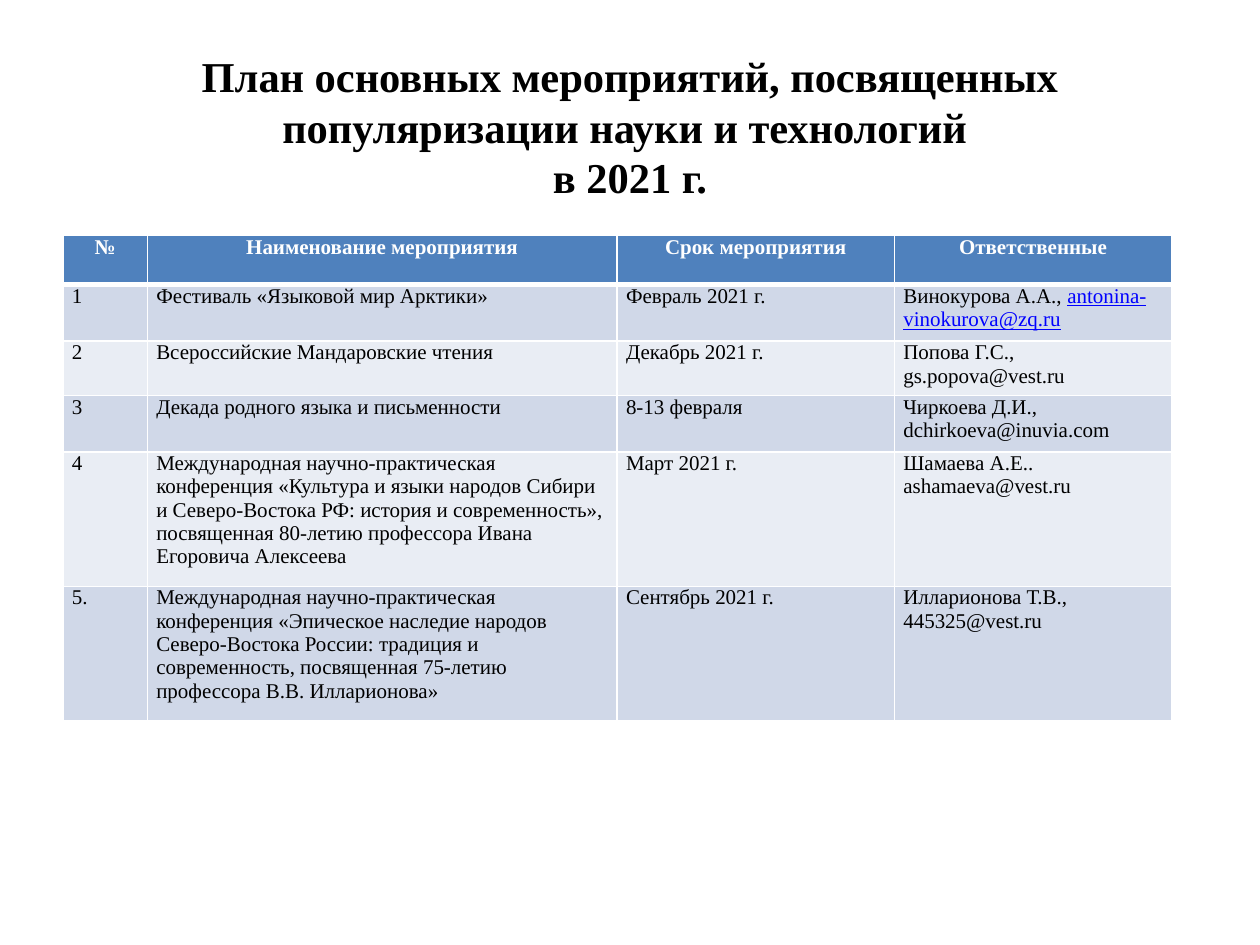
from dataclasses import dataclass

import lxml.etree
import pptx
import pptx.dml.color
import pptx.enum.text
import pptx.oxml.ns
import pptx.util

Cm = pptx.util.Cm
Pt = pptx.util.Pt
RGB = pptx.dml.color.RGBColor.from_string
ALIGN = pptx.enum.text.PP_ALIGN
qn = pptx.oxml.ns.qn


@dataclass(frozen=True)
class Theme:
    font: str = "Times New Roman"
    text: str = "000000"
    header_text: str = "FFFFFF"
    header_fill: str = "4F81BD"
    bands: tuple = ("D0D8E8", "E9EDF4")
    border: str = "FFFFFF"
    email: str = "0000FF"
    title_size: float = 24.3
    title_spacing: float = 29
    table_size: float = 12


theme = Theme()


def style_font(font, size, color, bold):
    font.name = theme.font
    font.size = Pt(size)
    font.bold = bold
    font.color.rgb = RGB(color)


def add_borders(cell, bottom_width):
    properties = cell._tc.get_or_add_tcPr()
    sides = (("lnL", 1), ("lnR", 1), ("lnT", 1), ("lnB", bottom_width))
    for position, (side, width) in enumerate(sides):
        line = lxml.etree.Element(qn(f"a:{side}"), w=str(Pt(width)))
        fill = lxml.etree.SubElement(line, qn("a:solidFill"))
        lxml.etree.SubElement(fill, qn("a:srgbClr"), val=theme.border)
        properties.insert(position, line)


presentation = pptx.Presentation()
presentation.slide_width = Cm(25.4)
presentation.slide_height = Cm(19.05)
slide = presentation.slides.add_slide(presentation.slide_layouts[5])

title = slide.shapes.title
title.left, title.top, title.width, title.height = Cm(1.27), Cm(0.76), Cm(22.86), Cm(3.18)
title_frame = title.text_frame
title_frame.text = (
    "План основных мероприятий, посвященных популяризации науки и технологий \vв 2021 г."
)
title_frame.word_wrap = True
title_frame.auto_size = pptx.enum.text.MSO_AUTO_SIZE.NONE
title_frame.vertical_anchor = pptx.enum.text.MSO_ANCHOR.TOP
title_frame.margin_top = Cm(0.25)
title_frame.margin_bottom = 0
paragraph = title_frame.paragraphs[0]
paragraph.alignment = ALIGN.CENTER
paragraph.line_spacing = Pt(theme.title_spacing)
style_font(paragraph.font, theme.title_size, theme.text, True)

events = [
    ("№", "Наименование мероприятия", "Срок мероприятия", "Ответственные"),
    ("1", "Фестиваль «Языковой мир Арктики»", "Февраль 2021 г.", "Винокурова А.А., "),
    ("2", "Всероссийские Мандаровские чтения", "Декабрь 2021 г.",
     "Попова Г.С., gs.popova@vest.ru"),
    ("3", "Декада родного языка и письменности", "8-13 февраля",
     "Чиркоева Д.И., dchirkoeva@inuvia.com"),
    ("4", "Международная научно-практическая конференция «Культура и языки народов Сибири "
     "и Северо-Востока РФ: история и современность», посвященная 80-летию профессора "
     "Ивана Егоровича Алексеева", "Март 2021 г.", "Шамаева А.Е.. ashamaeva@vest.ru"),
    ("5.", "Международная научно-практическая конференция «Эпическое наследие народов "
     "Северо-Востока России: традиция и современность, посвященная 75-летию профессора "
     "В.В. Илларионова»", "Сентябрь 2021 г.", "Илларионова Т.В., 445325@vest.ru"),
]
column_widths = [1.7, 9.47, 5.59, 5.59]
row_heights = [0.99, 1.14, 1.09, 1.14, 2.71, 2.71]

table = slide.shapes.add_table(
    len(events), len(column_widths),
    Cm(1.27), Cm(4.75), Cm(sum(column_widths)), Cm(sum(row_heights)),
).table
for column, width in zip(table.columns, column_widths):
    column.width = Cm(width)
for row, height in zip(table.rows, row_heights):
    row.height = Cm(height)

for row_index, event in enumerate(events):
    is_header = row_index == 0
    fill_color = theme.header_fill if is_header else theme.bands[(row_index - 1) % 2]
    text_color = theme.header_text if is_header else theme.text
    for column_index, text in enumerate(event):
        cell = table.cell(row_index, column_index)
        cell.text = text
        cell.margin_left = cell.margin_right = Cm(0.18)
        cell.margin_top = cell.margin_bottom = 0
        cell.fill.solid()
        cell.fill.fore_color.rgb = RGB(fill_color)
        add_borders(cell, 3 if is_header else 1)
        paragraph = cell.text_frame.paragraphs[0]
        paragraph.alignment = ALIGN.CENTER if is_header else ALIGN.LEFT
        paragraph.space_before = Pt(0.2)
        style_font(paragraph.font, theme.table_size, text_color, is_header)

email = table.cell(1, 3).text_frame.paragraphs[0].add_run()
email.text = "antonina-vinokurova@zq.ru"
email.font.underline = True
email.font.color.rgb = RGB(theme.email)

presentation.save("out.pptx")
